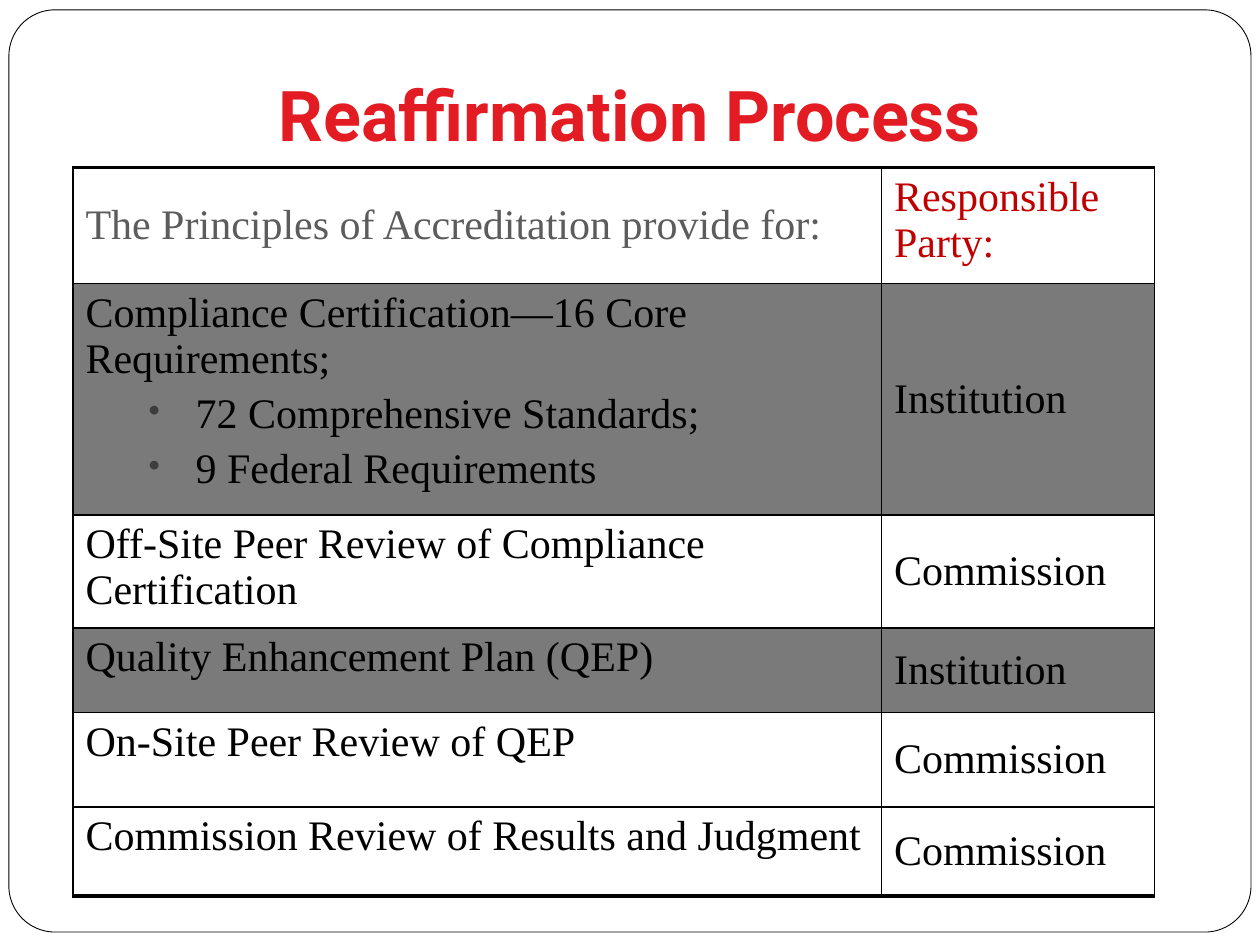
from pptx import Presentation
from pptx.dml.color import RGBColor
from pptx.enum.shapes import MSO_SHAPE
from pptx.enum.text import MSO_ANCHOR, PP_ALIGN
from pptx.oxml import parse_xml
from pptx.oxml.ns import nsdecls
from pptx.util import Cm, Pt

COLORS = {
    "black": "000000",
    "white": "FFFFFF",
    "title": "E31B23",
    "principles": "5C5C5C",
    "party": "C00000",
    "institution": "7A7A7A",
    "bullet": "3D3D3D",
}


def rgb(name):
    return RGBColor.from_string(COLORS[name])


def add_border(cell, side, points):
    """Draw one cell edge; side is L, R, T or B."""
    cell._tc.get_or_add_tcPr().append(parse_xml(
        f'<a:ln{side} {nsdecls("a")} w="{Pt(points)}"><a:solidFill>'
        f'<a:srgbClr val="{COLORS["black"]}"/></a:solidFill></a:ln{side}>'))


prs = Presentation()
prs.slide_width, prs.slide_height = Cm(25.4), Cm(19.05)
slide = prs.slides.add_slide(prs.slide_layouts[6])

frame = slide.shapes.add_shape(
    MSO_SHAPE.ROUNDED_RECTANGLE, Cm(0.18), Cm(0.2), Cm(25.04), Cm(18.59))
frame.adjustments[0] = 0.05
frame.shadow.inherit = False
frame.fill.solid()
frame.fill.fore_color.rgb = rgb("white")
frame.line.color.rgb = rgb("black")
frame.line.width = Pt(0.5)

title = slide.shapes.add_textbox(
    Cm(1.27), Cm(0.84), Cm(22.86), Cm(2.54)).text_frame
title.word_wrap = True
title.vertical_anchor = MSO_ANCHOR.BOTTOM
title.margin_bottom = Cm(0.25)
heading = title.paragraphs[0]
heading.text = "Reaffirmation Process"
heading.alignment = PP_ALIGN.CENTER
heading.font.name = "Roboto"
heading.font.size = Pt(40)
heading.font.bold = True
heading.font.color.rgb = rgb("title")

# Each step: its lines (those after the first are bulleted), party, row height
steps = [
    (["The Principles of Accreditation provide for:"],
     "Responsible\vParty:", 2.34),
    (["Compliance Certification—16 Core Requirements;",
      "72 Comprehensive Standards;",
      "9 Federal Requirements"], "Institution", 2.54),
    (["Off-Site Peer Review of Compliance Certification"], "Commission", 1.7),
    (["Quality Enhancement Plan (QEP)"], "Institution", 1.7),
    (["On-Site Peer Review of QEP"], "Commission", 1.9),
    (["Commission Review of Results and Judgment"], "Commission", 1.8),
]
header_colors = ["principles", "party"]
last = len(steps) - 1

process = slide.shapes.add_table(
    len(steps), 2, Cm(1.47), Cm(3.38), Cm(21.8), Cm(11.98)).table
process.first_row = process.horz_banding = False
process.columns[0].width = Cm(16.3)
process.columns[1].width = Cm(5.5)

for row, (lines, party, height) in enumerate(steps):
    process.rows[row].height = Cm(height)
    for col, content in enumerate([lines, [party]]):
        cell = process.cell(row, col)
        # Steps sit at the top and parties in the middle; the header reverses this
        centred = (col == 1) != (row == 0)
        cell.vertical_anchor = MSO_ANCHOR.MIDDLE if centred else MSO_ANCHOR.TOP

        add_border(cell, "L", 1)
        add_border(cell, "R", 1)
        add_border(cell, "T", 2.25 if row == 0 else 1)
        add_border(cell, "B", 2.25 if row == last else 1)
        if party == "Institution":
            cell.fill.solid()
            cell.fill.fore_color.rgb = rgb("institution")
        else:
            cell.fill.background()

        cell.text = "\n".join(content)
        for index, paragraph in enumerate(cell.text_frame.paragraphs):
            paragraph.space_before = Pt(4.8)
            paragraph.font.name = "Times New Roman"
            paragraph.font.size = Pt(24)
            paragraph.font.color.rgb = rgb(
                header_colors[col] if row == 0 else "black")
            if index > 0:
                paragraph.level = 1
                properties = paragraph._p.get_or_add_pPr()
                properties.set("marL", str(Cm(2.22)))
                properties.set("indent", str(Cm(-0.95)))
                bullet = [
                    f'<a:buClr {nsdecls("a")}>'
                    f'<a:srgbClr val="{COLORS["bullet"]}"/></a:buClr>',
                    f'<a:buSzPct {nsdecls("a")} val="80000"/>',
                    f'<a:buChar {nsdecls("a")} char="•"/>',
                ]
                for offset, xml in enumerate(bullet, start=1):
                    properties.insert(offset, parse_xml(xml))

prs.save("out.pptx")
